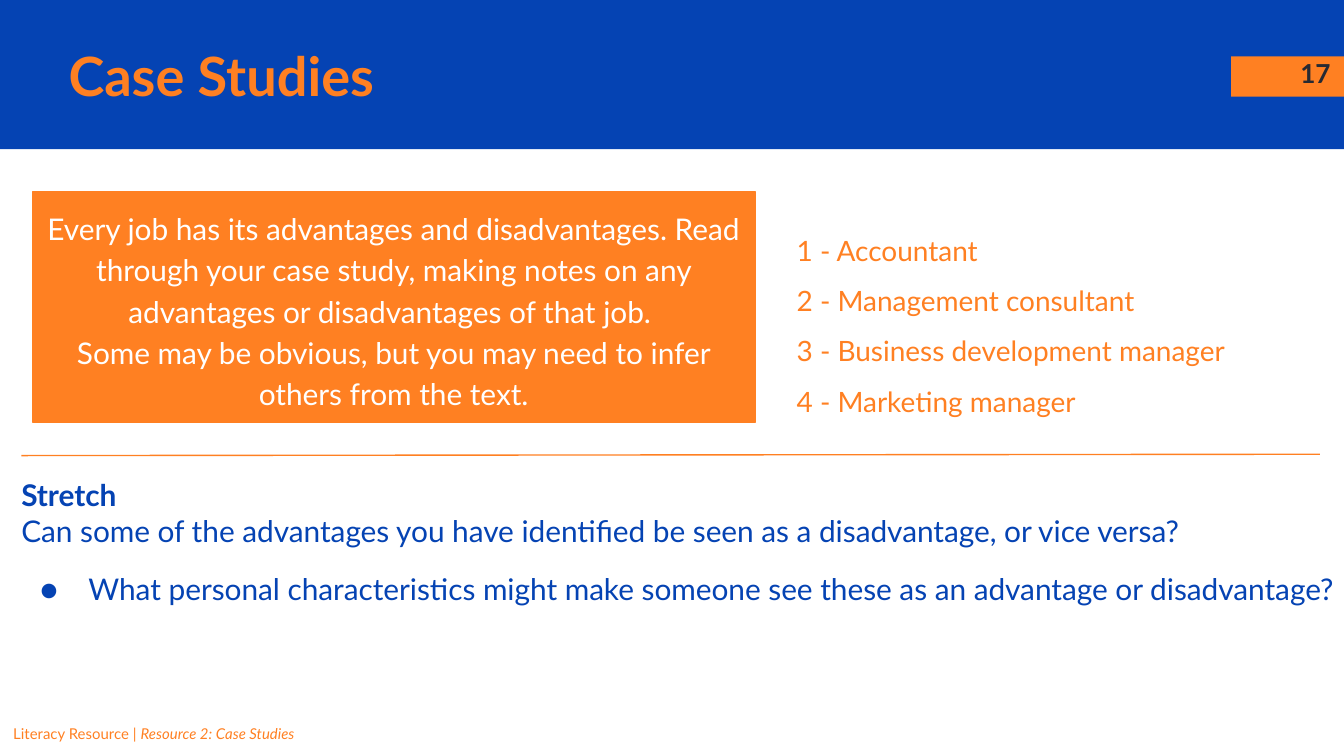
import pptx
import pptx.dml.color
import pptx.enum.shapes
import pptx.enum.text
import pptx.oxml
import pptx.oxml.ns
import pptx.util
from pptx.util import Inches

BLUE, ORANGE, WHITE, DARK = "0543B3", "FF8022", "FFFFFF", "262A33"
ALIGN = pptx.enum.text.PP_ALIGN


def color(value):
    return pptx.dml.color.RGBColor.from_string(value)


def add_text(para, text, size=16, fill=BLUE, bold=False, italic=False,
             align=ALIGN.LEFT, spacing=1.0):
    para.alignment = align
    para.line_spacing = spacing
    span = para.add_run()
    span.text = text
    font = span.font
    font.name = "Lato"
    font.size = pptx.util.Pt(size)
    font.bold = bold
    font.italic = italic
    font.color.rgb = color(fill)


deck = pptx.Presentation()
deck.slide_width = Inches(10)
deck.slide_height = Inches(10 * 9 / 16)
page = deck.slides.add_slide(deck.slide_layouts[5])
shapes = page.shapes

# Filled areas
panels = []
for left, top, width, height, fill in [
    (0, 0, 10, 1.11, BLUE),
    (9.16, 0.42, 0.84, 0.3, ORANGE),
    (0.24, 1.43, 5.38, 1.71, ORANGE),
]:
    panel = shapes.add_shape(pptx.enum.shapes.MSO_SHAPE.RECTANGLE, Inches(left),
                             Inches(top), Inches(width), Inches(height))
    panel.shadow.inherit = False
    panel.fill.solid()
    panel.fill.fore_color.rgb = color(fill)
    panel.line.fill.background()
    panels.append(panel)
banner, number_tab, task = panels
task.line.color.rgb = color(ORANGE)
task.line.width = pptx.util.Pt(0.75)

# The title stands in front of the banner
title = shapes.title
title.element.addprevious(banner.element)
title.left, title.top = Inches(0.41), Inches(0.28)
title.width, title.height = Inches(8.46), Inches(0.56)

# Text boxes
boxes = []
for left, top, width, height in [
    (9.4, 0.33, 0.6, 0.43),
    (5.83, 1.51, 3.83, 1.97),
    (0.06, 3.45, 10.05, 1.45),
    (0, 5.29, 6.17, 0.47),
]:
    boxes.append(shapes.add_textbox(Inches(left), Inches(top), Inches(width), Inches(height)))
number, jobs, stretch, footer = boxes

for box in [title, task, *boxes]:
    frame = box.text_frame
    frame.word_wrap = True
    frame.auto_size = pptx.enum.text.MSO_AUTO_SIZE.NONE
    frame.vertical_anchor = pptx.enum.text.MSO_ANCHOR.TOP
    frame.margin_left = frame.margin_right = Inches(0.1)
    frame.margin_top = frame.margin_bottom = Inches(0.1)
title.text_frame.vertical_anchor = pptx.enum.text.MSO_ANCHOR.MIDDLE

add_text(title.text_frame.paragraphs[0], "Case Studies", size=29, fill=ORANGE, bold=True)
add_text(number.text_frame.paragraphs[0], "17", size=14, fill=DARK, bold=True,
         align=ALIGN.RIGHT)

footer_para = footer.text_frame.paragraphs[0]
add_text(footer_para, "Literacy Resource | ", size=8, fill=ORANGE)
add_text(footer_para, "Resource 2: Case Studies", size=8, fill=ORANGE, italic=True)

task_texts = [
    "Every job has its advantages and disadvantages. Read through your case study, "
    "making notes on any advantages or disadvantages of that job. ",
    "Some may be obvious, but you may need to infer others from the text.",
]
job_names = ["Accountant", "Management consultant", "Business development manager",
             "Marketing manager"]
job_texts = [f"{index} - {name}" for index, name in enumerate(job_names, 1)]
stretch_texts = [
    "Stretch",
    "Can some of the advantages you have identified be seen as a disadvantage, or vice versa?",
    "What personal characteristics might make someone see these as an advantage or disadvantage?",
]
for box, texts, style in [
    (task, task_texts, dict(fill=WHITE, align=ALIGN.CENTER, spacing=1.15)),
    (jobs, job_texts, dict(size=15, fill=ORANGE, spacing=1.5)),
    (stretch, stretch_texts, {}),
]:
    frame = box.text_frame
    for index, text in enumerate(texts):
        para = frame.add_paragraph() if index else frame.paragraphs[0]
        add_text(para, text, bold=text == "Stretch", **style)

# Bullet on the last question
bullet_para = stretch.text_frame.paragraphs[-1]
bullet_para.space_before = pptx.util.Pt(12)
properties = bullet_para._p.get_or_add_pPr()
properties.set("marL", str(Inches(0.5)))
properties.set("indent", str(Inches(-0.36)))
namespace = pptx.oxml.ns.nsdecls("a")
for xml in [
    f'<a:buClr {namespace}><a:srgbClr val="{BLUE}"/></a:buClr>',
    f'<a:buFont {namespace} typeface="Lato"/>',
    f'<a:buChar {namespace} char="●"/>',
]:
    properties.append(pptx.oxml.parse_xml(xml))

# Divider
divider = shapes.add_connector(pptx.enum.shapes.MSO_CONNECTOR.STRAIGHT, Inches(0.16),
                               Inches(3.39), Inches(9.82), Inches(3.38))
divider.line.color.rgb = color(ORANGE)
divider.line.width = pptx.util.Pt(0.75)
divider.element.spPr.append(pptx.oxml.parse_xml(f"<a:effectLst {namespace}/>"))

deck.save("out.pptx")
